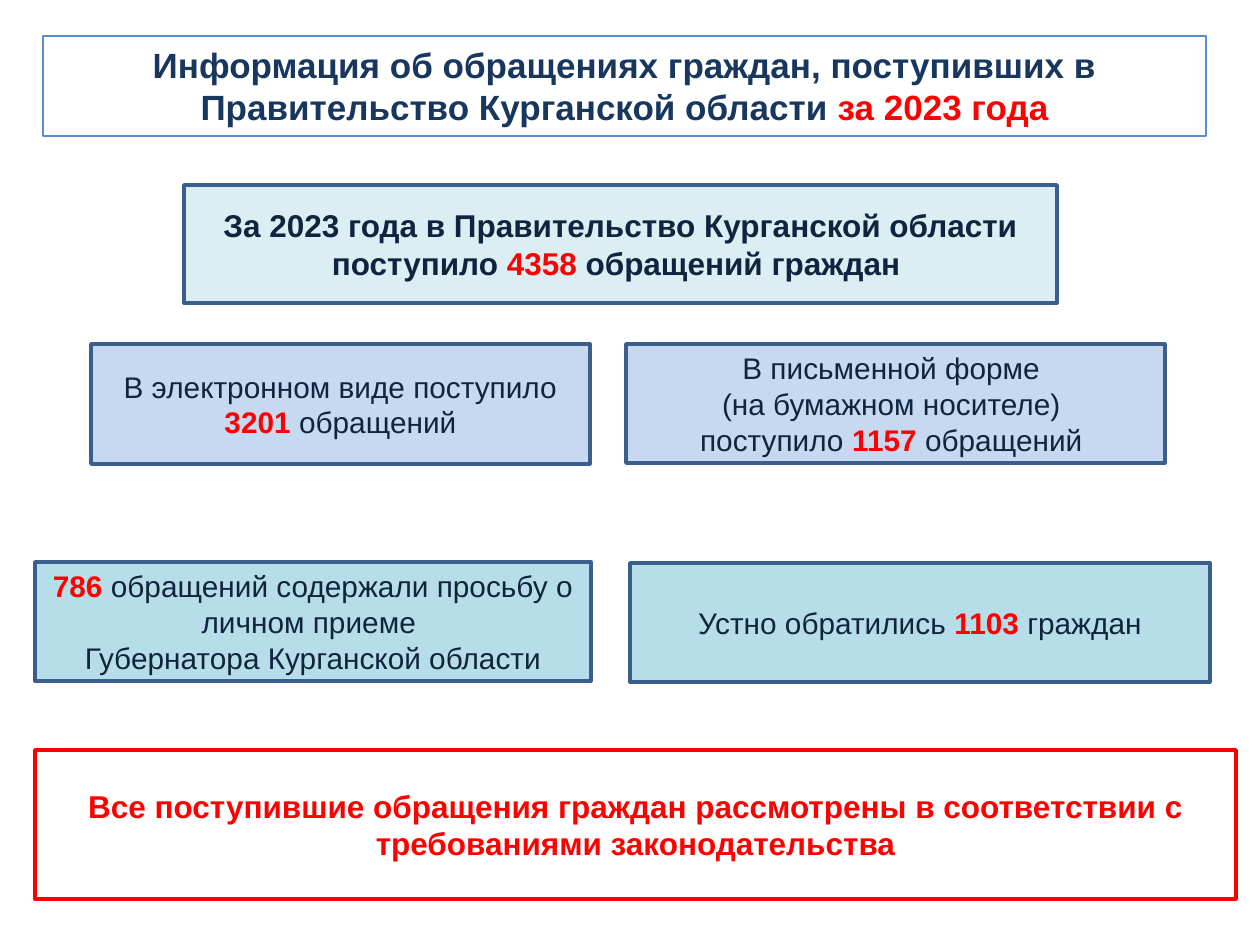
from pptx import Presentation
from pptx import util as u
from pptx.dml.color import RGBColor
from pptx.enum import shapes, text

EMU_PER_PX = 914400 / 126
NAVY, INK, RED, STEEL = "17375E", "0F243E", "FF0000", "3A5F8C"
PALE, BLUE, TEAL = "DBEEF4", "C6D9F1", "B7DEE8"


def px(length):
    return u.Emu(round(length * EMU_PER_PX))


def color(value):
    return RGBColor.from_string(value)


class AppealsSlide:
    """Draws outlined text boxes on one slide in a shared style."""

    font = "Arial"
    accent = RED

    def __init__(self, presentation):
        self.slide = presentation.slides.add_slide(presentation.slide_layouts[6])

    def box(self, bounds, paragraphs, size=17, ink=INK, bold=False,
            fill=None, line=STEEL, line_width=2):
        shape = self.slide.shapes.add_shape(
            shapes.MSO_SHAPE.RECTANGLE, *map(px, bounds))
        shape.shadow.inherit = False
        if fill:
            shape.fill.solid()
            shape.fill.fore_color.rgb = color(fill)
        else:
            shape.fill.background()
        shape.line.color.rgb = color(line)
        shape.line.width = u.Pt(line_width)
        frame = shape.text_frame
        frame.word_wrap = True
        frame.vertical_anchor = text.MSO_ANCHOR.MIDDLE
        for index, parts in enumerate(paragraphs):
            paragraph = frame.add_paragraph() if index else frame.paragraphs[0]
            self.add_runs(paragraph, parts, size, ink, bold)

    def add_runs(self, paragraph, parts, size, ink, bold):
        paragraph.alignment = text.PP_ALIGN.CENTER
        for words, highlighted in parts:
            run = paragraph.add_run()
            run.text = words
            run.font.name = self.font
            run.font.size = u.Pt(size)
            run.font.bold = bold or highlighted
            run.font.color.rgb = color(self.accent if highlighted else ink)


def main():
    presentation = Presentation()
    presentation.slide_width = px(1260)
    presentation.slide_height = px(945)
    page = AppealsSlide(presentation)

    page.box((43, 36, 1163, 100), [[
        ("Информация об обращениях граждан, поступивших в "
         "Правительство Курганской области ", False),
        ("за 2023 года", True)]],
        size=20, ink=NAVY, bold=True, line="558ED5", line_width=0.75)
    page.box((184, 185, 873, 118), [[
        ("За 2023 года в Правительство Курганской области поступило ", False),
        ("4358 ", True),
        ("обращений граждан ", False)]],
        size=18, bold=True, fill=PALE)

    page.box((91, 344, 499, 120), [[
        ("В электронном виде поступило ", False),
        ("3201 ", True),
        ("обращений", False)]], fill=BLUE)
    page.box((626, 344, 539, 119), [
        [("В письменной форме ", False)],
        [("(на бумажном носителе) ", False)],
        [("поступило ", False), ("1157 ", True), ("обращений ", False)]],
        fill=BLUE)

    page.box((35, 562, 556, 119), [
        [("786 ", True),
         ("обращений содержали просьбу о личном приеме ", False)],
        [("Губернатора Курганской области", False)]], fill=TEAL)
    page.box((630, 563, 580, 119), [[
        ("Устно обратились ", False),
        ("1103 ", True),
        ("граждан", False)]], fill=TEAL)

    page.box((35, 750, 1201, 149), [[
        ("Все поступившие обращения граждан рассмотрены в соответствии с "
         "требованиями законодательства", True)]], size=18, line=RED)

    presentation.save("out.pptx")


if __name__ == "__main__":
    main()
